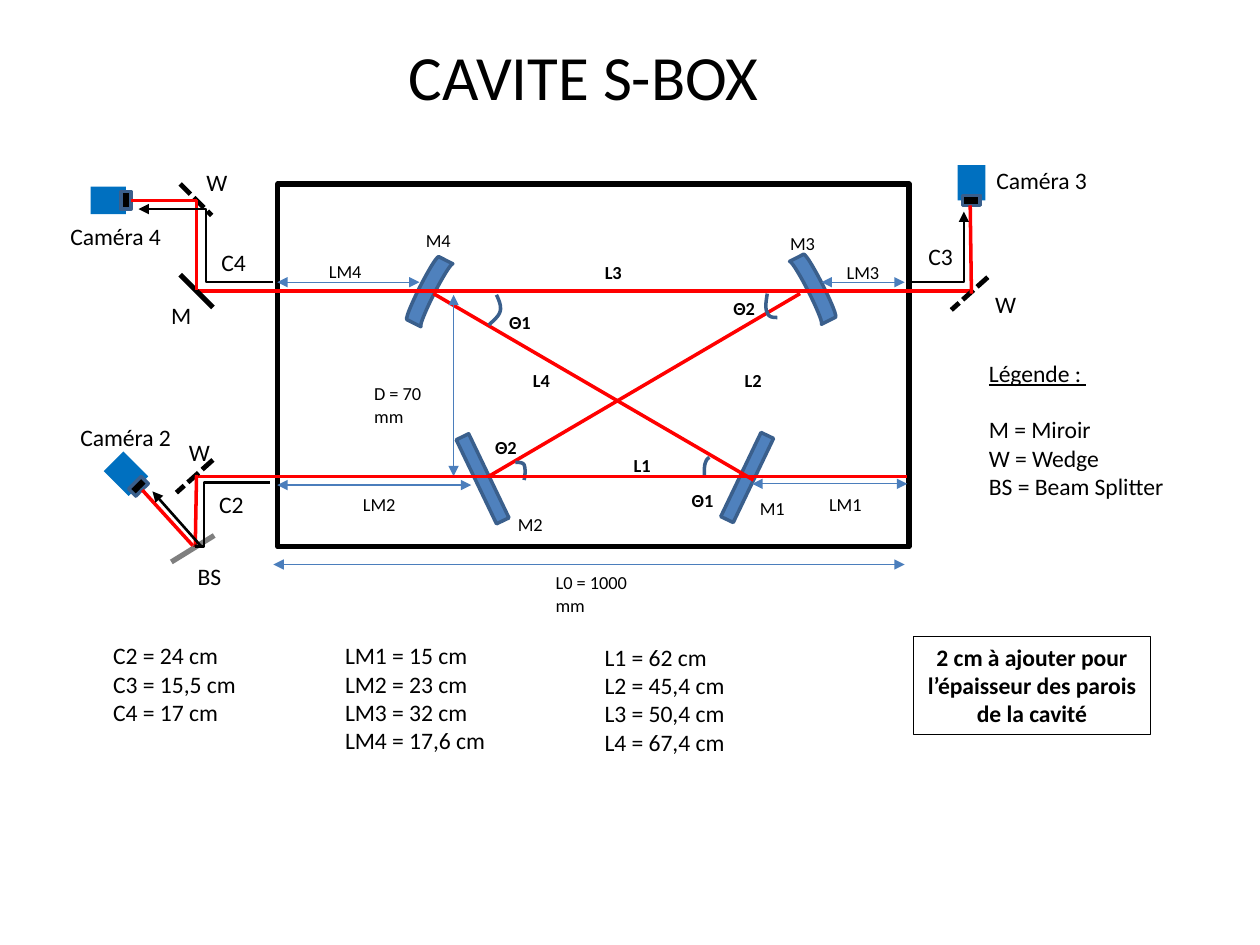
from dataclasses import dataclass
from math import cos, radians, sin

from lxml.etree import SubElement
from pptx import Presentation
from pptx.dml.color import RGBColor as RGB
from pptx.enum.dml import MSO_LINE as Dash
from pptx.enum.shapes import MSO_CONNECTOR as Link, MSO_SHAPE as Kind
from pptx.enum.text import PP_ALIGN as Align
from pptx.oxml.ns import qn
from pptx.util import Inches, Pt


@dataclass(frozen=True)
class Theme:
    font: str = "Calibri"
    ink: str = "000000"
    beam: str = "FF0000"
    glass: str = "4F81BD"
    edge: str = "3A5F8C"
    dim: str = "4B7EBC"
    cam: str = "0070C0"
    title: float = 36
    body: float = 13.5
    small: float = 10.5


T = Theme()


def apply(obj, **fmt):
    for name, value in fmt.items():
        setattr(obj, name, value)


@dataclass
class Area:
    """Draws parts relative to the top left corner of a box."""
    shapes: object
    x: float
    y: float

    def at(self, x, y):
        return Inches(self.x + x), Inches(self.y + y)

    def pen(self, line, color, width, dash=None):
        line.color.rgb = RGB.from_string(color)
        apply(line, width=Pt(width), dash_style=dash)

    def line(self, start, end, color=T.ink, width=1.5, ends=(), dash=None,
             bend=None, adj=None, alpha=None):
        link = self.shapes.add_connector(
            Link.ELBOW if bend else Link.STRAIGHT, *self.at(*start), *self.at(*end))
        self.pen(link.line, color, width, dash)
        props = link._element.spPr
        geom = props.find(qn("a:prstGeom"))
        if bend:
            geom.set("prst", bend)
        if adj:
            SubElement(geom.find(qn("a:avLst")), qn("a:gd"),
                       name="adj1", fmla=f"val {adj}")
        stroke = props.find(qn("a:ln"))
        if alpha:
            tint = stroke.find(".//" + qn("a:srgbClr"))
            SubElement(tint, qn("a:alpha"), val=str(alpha))
        for end_name in ends:
            SubElement(stroke, qn(f"a:{end_name}"), type="triangle")
        SubElement(props, qn("a:effectLst"))

    def beam(self, *points):
        for start, end in zip(points, points[1:]):
            self.line(start, end, T.beam, 2)

    def span(self, start, end):
        self.line(start, end, T.dim, 0.75, ("headEnd", "tailEnd"))

    def block(self, mid, size, fill=None, edge=None, width=2, turn=0, kind=Kind.RECTANGLE):
        (x, y), (w, h) = mid, size
        box = self.shapes.add_shape(
            kind, *self.at(x - w / 2, y - h / 2), Inches(w), Inches(h))
        apply(box, rotation=turn)
        box.shadow.inherit = False
        if fill:
            box.fill.solid()
            box.fill.fore_color.rgb = RGB.from_string(fill)
        else:
            box.fill.background()
        if edge:
            self.pen(box.line, edge, width)
        else:
            box.line.fill.background()

    def arc(self, *curves):
        """Traces joined cubic curves, each given by four points."""
        dots = []
        for a, b, c, d in curves:
            for t in (i / 8 for i in range(9)):
                s = 1 - t
                dots.append(self.at(*(
                    s**3 * p + 3 * s * s * t * q + 3 * s * t * t * r + t**3 * u
                    for p, q, r, u in zip(a, b, c, d))))
        build = self.shapes.build_freeform(*dots[0], scale=1.0)
        build.add_line_segments(dots[1:], close=False)
        path = build.convert_to_shape()
        path.shadow.inherit = False
        path.fill.background()
        self.pen(path.line, T.edge, 2)

    def text(self, x, y, w, h, *lines, size=T.body, bold=False, align=Align.LEFT):
        frame = self.shapes.add_textbox(
            *self.at(x, y), Inches(w), Inches(h)).text_frame
        small = size == T.small
        side, top = (Inches(0.07), Inches(0.04)) if small else (Inches(0.1), Inches(0.05))
        apply(frame, word_wrap=False, margin_left=side, margin_right=side,
              margin_top=top, margin_bottom=top, text="\n".join(lines))
        for para in frame.paragraphs:
            apply(para, alignment=align)
            if small:
                apply(para, line_spacing=1.07, space_after=Pt(6))
            for run in para.runs:
                apply(run.font, name=T.font, size=Pt(size), bold=bold)
                run.font.color.rgb = RGB.from_string(T.ink)
        return frame.paragraphs

    def camera(self, x, y, turn=0):
        reach, angle = 0.14, radians(turn)
        self.block((x, y), (0.22, 0.28), T.cam, turn=turn)
        self.block((x - reach * sin(angle), y + reach * cos(angle)),
                   (0.14, 0.08), T.ink, T.edge, turn=turn)

    def wedge(self, start, end):
        self.line(start, end, width=2.75, dash=Dash.SQUARE_DOT)


def cavity(area):
    # Mirrors
    for mid, turn in (((3.73, 2.33), 25.6), ((1.63, 2.34), 154.4)):
        area.block(mid, (0.11, 0.74), T.glass, T.edge, turn=turn)
    for mid, turn in (((4.26, 0.83), 153.1), ((1.2, 0.85), 26.9)):
        area.block(mid, (0.15, 0.56), T.glass, T.edge, turn=turn,
                   kind=Kind.FLOWCHART_STORED_DATA)
    # Crossed beams and their angles
    area.beam((1.68, 2.32), (4.15, 0.87))
    area.beam((1.24, 0.87), (3.78, 2.35))
    area.arc(((1.74, 0.88), (1.76, 0.92), (1.78, 0.97), (1.77, 1.01)),
             ((1.77, 1.01), (1.76, 1.05), (1.72, 1.08), (1.68, 1.12)))
    area.arc(((3.39, 2.31), (3.39, 2.27), (3.39, 2.23), (3.4, 2.21)),
             ((3.4, 2.21), (3.41, 2.18), (3.42, 2.18), (3.43, 2.17)))
    area.arc(((1.89, 2.21), (1.92, 2.21), (1.95, 2.21), (1.96, 2.23)),
             ((1.96, 2.23), (1.97, 2.26), (1.97, 2.3), (1.96, 2.35)))
    area.arc(((3.97, 1.06), (3.94, 1.06), (3.9, 1.06), (3.89, 1.02)),
             ((3.89, 1.02), (3.87, 0.99), (3.88, 0.93), (3.89, 0.87)))
    # Walls and dimensions
    area.block((2.51, 1.44), (5.01, 2.88), edge=T.ink, width=3)
    for start, end in (((-0.03, 3.02), (4.98, 3.02)), ((4.32, 0.78), (4.98, 0.78)),
                       ((0, 0.78), (1.13, 0.78)), ((3.77, 2.38), (5, 2.38)),
                       ((0, 2.39), (1.54, 2.39)), ((1.4, 2.32), (1.4, 0.88))):
        area.span(start, end)
    for label, x, y, w in (
            ("M1", 3.76, 2.43, 0.45), ("M2", 1.84, 2.56, 0.45),
            ("M3", 4, 0.33, 0.45), ("M4", 1.11, 0.31, 0.45),
            ("LM1", 4.31, 2.4, 0.62), ("LM2", 0.61, 2.4, 0.62),
            ("LM3", 4.45, 0.56, 0.62), ("LM4", 0.34, 0.55, 0.62),
            ("L0 = 1000 mm", 2.14, 3.02, 0.83), ("D = 70 mm", 0.7, 1.52, 0.77)):
        area.text(x, y, w, 0.21, label, size=T.small)
    for label, x, y in (
            ("Θ1", 1.77, 0.96), ("Θ1", 3.22, 2.37), ("Θ2", 3.55, 0.85),
            ("Θ2", 1.66, 1.95), ("L1", 2.76, 2.09), ("L2", 3.64, 1.42),
            ("L3", 2.53, 0.56), ("L4", 1.96, 1.42)):
        area.text(x, y, 0.37, 0.21, label, size=T.small, bold=True)
    # Straight beams leaving the box
    area.beam((5, 2.32), (-0.64, 2.32))
    area.beam((5.51, 0.85), (-0.64, 0.85))


def bay4(area):
    area.line((1.03, 0.98), (1.29, 1.24), width=3)
    area.wedge((1.03, 0.26), (1.28, 0.51))
    area.camera(0.46, 0.39, 270)
    area.beam((1.16, 1.1), (1.16, 0.39), (0.64, 0.39))
    area.line((1.77, 1.04), (0.7, 0.46), ends=("tailEnd",), bend="bentConnector3")
    for label, x, y, w in (("Caméra 4", 0.06, 0.51, 0.93), ("W", 1.14, 0.08, 0.37),
                           ("M", 0.86, 1.14, 0.36), ("C4", 1.26, 0.72, 0.4)):
        area.text(x, y, w, 0.33, label)


def bay2(area):
    area.wedge((1.29, 0.35), (1, 0.61))
    area.camera(0.6, 0.46, 315)
    area.beam((1.16, 0.47), (1.15, 1.04))
    area.line((0.96, 1.16), (1.3, 0.95), width=3, alpha=49000)
    area.beam((1.13, 1.03), (0.73, 0.59))
    area.line((1.74, 0.53), (1.15, 1.04), bend="bentConnector3", adj=88200)
    area.line((1.2, 1.04), (0.81, 0.6), ends=("tailEnd",))
    for label, x, y, w in (("Caméra 2", 0.14, 0.01, 0.93), ("W", 1, 0.13, 0.37),
                           ("BS", 1.07, 1.11, 0.39), ("C2", 1.24, 0.54, 0.4)):
        area.text(x, y, w, 0.33, label)


def bay3(area):
    area.wedge((0.64, 1), (0.35, 1.26))
    area.camera(0.51, 0.25)
    area.beam((0.51, 1.13), (0.5, 0.43))
    area.line((0.03, 1.04), (0.45, 0.48), ends=("tailEnd",), bend="bentConnector2")
    for label, x, y, w in (("Caméra 3", 0.61, 0.07, 0.93), ("W", 0.6, 1.05, 0.37),
                           ("C3", 0.07, 0.67, 0.4)):
        area.text(x, y, w, 0.33, label)


def legend(area):
    head = area.text(0, 0, 1.61, 1.46, "Légende : ", "M = Miroir", "W = Wedge",
                     "BS = Beam Splitter")[0]
    apply(head, space_after=Pt(16))
    apply(head.runs[0].font, underline=True)


def values(area):
    area.text(0, 0, 5.76, 0.78, "C2 = 24 cm", "C3 = 15,5 cm", "C4 = 17 cm")
    area.text(1.84, 0, 1.33, 1.01, "LM1 = 15 cm", "LM2 = 23 cm",
              "LM3 = 32 cm", "LM4 = 17,6 cm")
    area.text(3.9, 0.01, 1.17, 1.01, "L1 = 62 cm", "L2 = 45,4 cm",
              "L3 = 50,4 cm", "L4 = 67,4 cm")


def note(area):
    area.block((0.94, 0.39), (1.88, 0.78), edge=T.ink, width=0.75)
    area.text(0, 0, 1.88, 0.78, "2 cm à ajouter pour", "l’épaisseur des parois",
              "de la cavité", bold=True, align=Align.CENTER)


def title(area):
    area.text(0, 0, 3.18, 0.71, "CAVITE S-BOX", size=T.title, align=Align.CENTER)


def main():
    deck = Presentation()
    apply(deck, slide_width=Inches(10), slide_height=Inches(7.5))
    shapes = deck.slides.add_slide(deck.slide_layouts[6]).shapes
    for draw, x, y in ((cavity, 2.2, 1.46), (bay4, 0.4, 1.2), (bay2, 0.4, 3.3),
                       (bay3, 7.2, 1.2), (legend, 7.75, 2.8), (values, 0.8, 5.04),
                       (note, 7.25, 5.05), (title, 3.04, 0.25)):
        draw(Area(shapes, x, y))
    deck.save("out.pptx")


if __name__ == "__main__":
    main()
